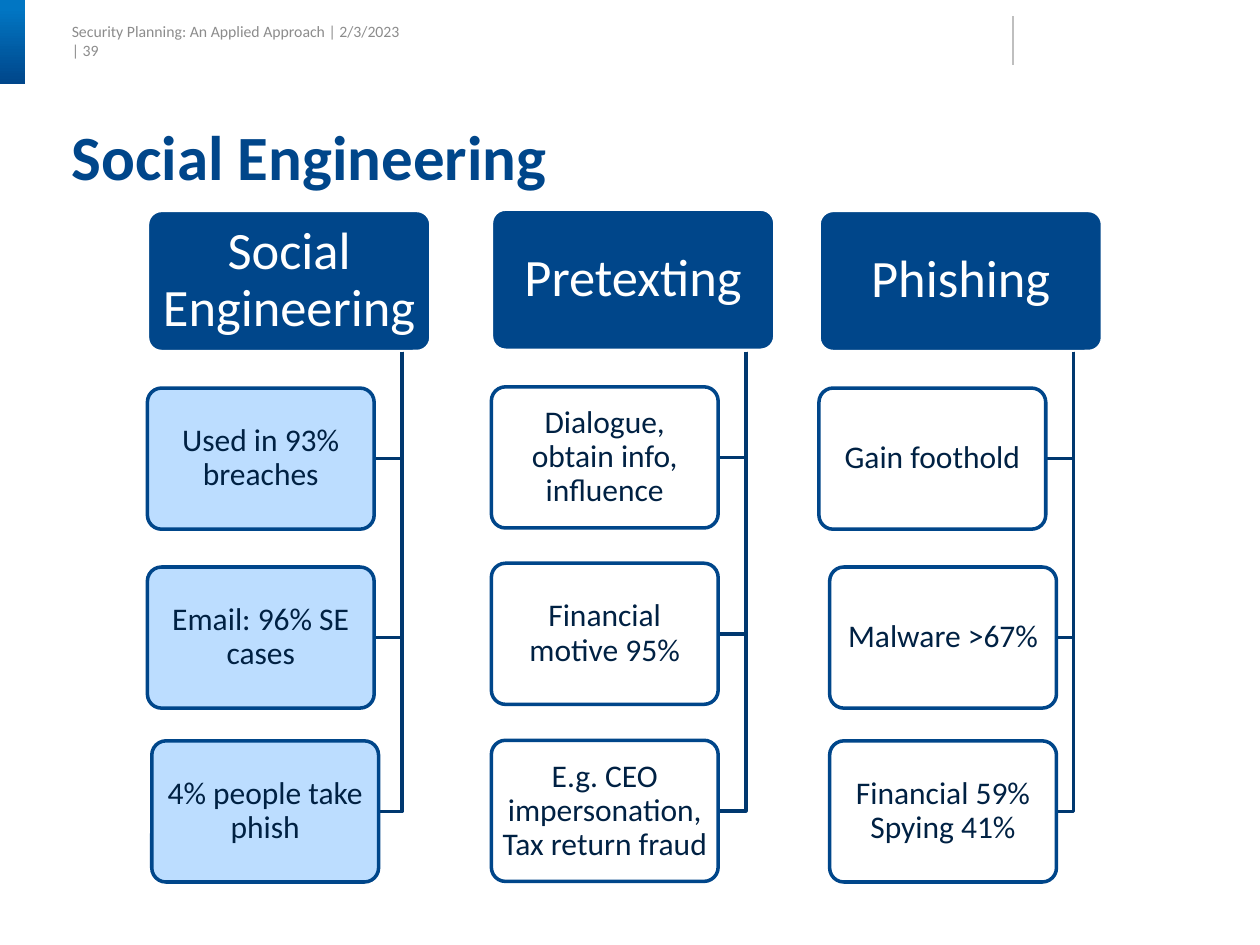
from lxml.etree import SubElement
from pptx import Presentation
from pptx.dml.color import RGBColor
from pptx.enum.shapes import MSO_CONNECTOR, MSO_SHAPE
from pptx.enum.text import MSO_ANCHOR, PP_ALIGN
from pptx.oxml.ns import qn
from pptx.util import Inches, Pt

WIDTH, HEIGHT = Inches(10), Inches(7.5)
COLUMNS, ROWS = 100, 75
COLORS = {
    "navy": "00468A",
    "bright": "0176C3",
    "branch": "00386F",
    "ink": "002143",
    "pale": "B5DAFF",
    "white": "FFFFFF",
    "gray": "8C8C8C",
    "rule": "BFBFBF",
}
HEADING_SIZE = (22.5, 11.2)
DETAIL_SIZE = (18, 11.2)
HEADING_BOTTOM = 27.9
TRUNK_OFFSET = 20.2
TOPICS = [
    ("Social Engineering", 11.7, 16.7, "pale", [
        ("Used in 93% breaches", 0, 30.8),
        ("Email: 96% SE cases", 0, 45),
        ("4% people take phish", 0.35, 58.8),
    ]),
    ("Pretexting", 39, 16.6, "white", [
        ("Dialogue, obtain info, influence", 0, 30.7),
        ("Financial motive 95%", 0, 44.7),
        ("E.g. CEO impersonation, Tax return fraud", 0, 58.75),
    ]),
    ("Phishing", 65, 16.7, "white", [
        ("Gain foothold", 0, 30.8),
        ("Malware >67%", 0.85, 45),
        ("Financial 59% Spying 41%", 0.85, 58.8),
    ]),
]


def across(columns):
    return int(WIDTH * columns / COLUMNS)


def down(rows):
    return int(HEIGHT * rows / ROWS)


def area(left, top, width, height):
    return across(left), down(top), across(width), down(height)


def rgb(name):
    return RGBColor.from_string(COLORS[name])


def write(holder, text, *, size, color, bold=False, align=PP_ALIGN.LEFT,
          anchor=MSO_ANCHOR.MIDDLE, insets=(0, 0, 0, 0), wrap=True, spacing=0.9):
    frame = holder.text_frame
    frame.word_wrap = wrap
    frame.vertical_anchor = anchor
    frame.margin_left, frame.margin_top, frame.margin_right, frame.margin_bottom = map(Inches, insets)
    paragraph = frame.paragraphs[0]
    paragraph.alignment = align
    paragraph.line_spacing = spacing
    run = paragraph.add_run()
    run.text = text
    run.font.name = "Calibri"
    run.font.size = Pt(size)
    run.font.bold = bold
    run.font.color.rgb = rgb(color)


def add_label(slide, place, text, **style):
    write(slide.shapes.add_textbox(*area(*place)), text, **style)


def add_card(slide, place, text, *, fill, line, opacity=100, **style):
    card = slide.shapes.add_shape(MSO_SHAPE.ROUNDED_RECTANGLE, *area(*place))
    card.adjustments[0] = 0.1
    card.shadow.inherit = False
    card.fill.solid()
    card.fill.fore_color.rgb = rgb(fill)
    if opacity < 100:
        tint = card.fill._xPr.find(".//" + qn("a:srgbClr"))
        SubElement(tint, qn("a:alpha")).set("val", str(opacity * 1000))
    card.line.color.rgb = rgb(line)
    card.line.width = Pt(2)
    write(card, text, align=PP_ALIGN.CENTER, **style)


def add_branch(slide, trunk, card_right, card_middle):
    builder = slide.shapes.build_freeform(across(trunk), down(HEADING_BOTTOM))
    builder.add_line_segments(
        [(across(trunk), down(card_middle)), (across(card_right), down(card_middle))], close=False)
    branch = builder.convert_to_shape()
    branch.shadow.inherit = False
    branch.fill.background()
    branch.line.color.rgb = rgb("branch")
    branch.line.width = Pt(2)


def add_topic(slide, heading, left, top, tint, details):
    add_card(slide, (left, top, *HEADING_SIZE), heading, fill="navy", line="white",
             size=30, color="white", insets=(0.06, 0.04, 0.06, 0.04))
    width, height = DETAIL_SIZE
    for text, shift, detail_top in details:
        detail_left = left + shift
        add_branch(slide, left + TRUNK_OFFSET, detail_left + width, detail_top + height / 2)
        add_card(slide, (detail_left, detail_top, width, height), text, fill=tint, line="navy",
                 opacity=90, size=18, color="ink", insets=(0.04, 0.03, 0.04, 0.03))


def add_corner_band(slide):
    band = slide.shapes.add_shape(MSO_SHAPE.RECTANGLE, *area(0, 0, 2, 6.7))
    band.shadow.inherit = False
    band.line.fill.background()
    band.fill.gradient()
    band.fill.gradient_angle = 270
    for stop, (position, color) in zip(band.fill.gradient_stops, [(0.1, "bright"), (1, "navy")]):
        stop.position = position
        stop.color.rgb = rgb(color)


def add_header_rule(slide):
    rule = slide.shapes.add_connector(
        MSO_CONNECTOR.STRAIGHT, across(80.4), down(1.3), across(80.4), down(5.2))
    rule.line.color.rgb = rgb("rule")
    rule.line.width = Pt(0.75)
    SubElement(rule._element.spPr, qn("a:effectLst"))


def main():
    deck = Presentation()
    deck.slide_width, deck.slide_height = WIDTH, HEIGHT
    slide = deck.slides.add_slide(deck.slide_layouts[6])
    add_label(slide, (5.7, 2.3, 28.4, 2.3), "Security Planning: An Applied Approach | 2/3/2023 | 39",
              size=9, color="gray", insets=(0, 0, 0.2, 0.04), wrap=False, spacing=1)
    add_corner_band(slide)
    add_header_rule(slide)
    for topic in TOPICS:
        add_topic(slide, *topic)
    add_label(slide, (5.7, 10, 89.2, 5.5), "Social Engineering",
              size=36, color="navy", bold=True, anchor=MSO_ANCHOR.TOP)
    deck.save("out.pptx")


if __name__ == "__main__":
    main()
